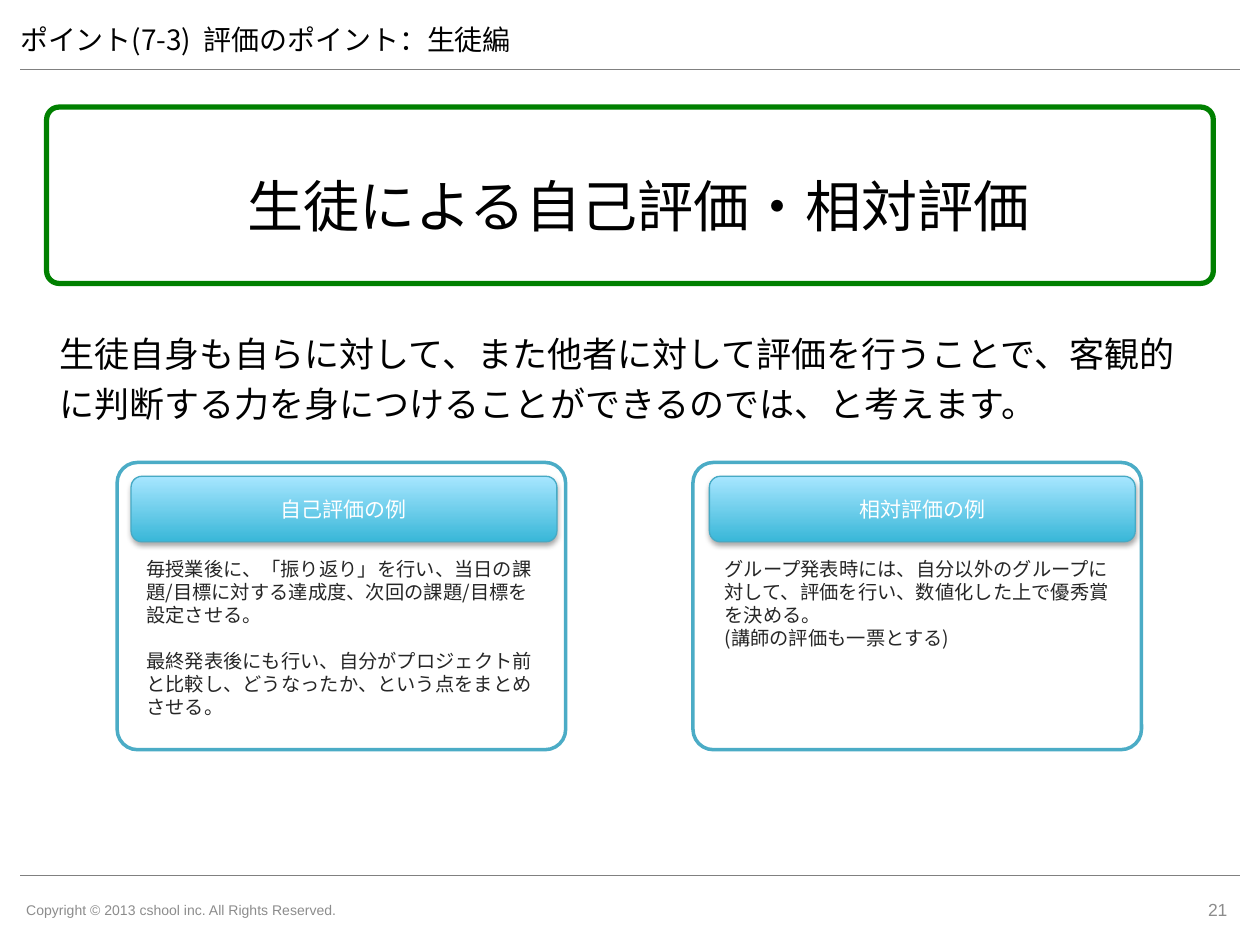
from lxml import etree
from pptx import Presentation
from pptx.dml.color import RGBColor
from pptx.enum import shapes, text
from pptx.oxml.ns import qn
from pptx.util import Inches, Pt

JP, LATIN = "Noto Sans CJK JP", "Arial"
BODY_INSETS = (0.12, 0.08, 0.12, 0.08)
PLAIN_INSETS = (0.1, 0.05, 0.1, 0.05)
LEFT, CENTER, RIGHT = text.PP_ALIGN.LEFT, text.PP_ALIGN.CENTER, text.PP_ALIGN.RIGHT
TOP, MIDDLE = text.MSO_ANCHOR.TOP, text.MSO_ANCHOR.MIDDLE


def rgb(value):
    return RGBColor.from_string(value)


def write(shape, paragraphs, size, color, font=JP, align=LEFT, anchor=MIDDLE,
          insets=PLAIN_INSETS, spacing=None, gap=0):
    """Fill a shape with paragraphs; gap is the space in points between them."""
    frame = shape.text_frame
    frame.word_wrap = True
    frame.auto_size = text.MSO_AUTO_SIZE.NONE
    frame.vertical_anchor = anchor
    (frame.margin_left, frame.margin_top,
     frame.margin_right, frame.margin_bottom) = map(Inches, insets)
    for index, line in enumerate(paragraphs):
        paragraph = frame.add_paragraph() if index else frame.paragraphs[0]
        paragraph.text = line
        paragraph.alignment = align
        if spacing:
            paragraph.line_spacing = spacing
        if index:
            paragraph.space_before = Pt(gap)
        paragraph.font.size = Pt(size)
        paragraph.font.name = font
        paragraph.font.color.rgb = rgb(color)
        defaults = paragraph._p.pPr.find(qn("a:defRPr"))
        etree.SubElement(defaults, qn("a:ea"), typeface=font)


def add_text(slide, box, paragraphs, size, color, **style):
    write(slide.shapes.add_textbox(*map(Inches, box)), paragraphs, size, color, **style)


def add_frame(slide, box, line, width, rounding=None, fill="FFFFFF"):
    frame = slide.shapes.add_shape(shapes.MSO_SHAPE.ROUNDED_RECTANGLE, *map(Inches, box))
    frame.shadow.inherit = False
    if rounding:
        frame.adjustments[0] = rounding
    frame.fill.solid()
    frame.fill.fore_color.rgb = rgb(fill)
    frame.line.color.rgb = rgb(line)
    frame.line.width = Pt(width)
    return frame


def add_rule(slide, y):
    rule = slide.shapes.add_connector(
        shapes.MSO_CONNECTOR.STRAIGHT, Inches(0.16), Inches(y), Inches(9.84), Inches(y))
    rule.line.color.rgb = rgb("808080")
    rule.line.width = Pt(0.75)
    etree.SubElement(rule._element.spPr, qn("a:effectLst"))


def add_header(slide, box, heading):
    title = slide.shapes.title
    title.left, title.top, title.width, title.height = map(Inches, box)
    write(title, [heading], 16, "000000")
    add_rule(slide, box[1] + box[3])


def add_footer(slide, top, copyright_line, number):
    add_rule(slide, top - 0.07)
    add_text(slide, (0.11, top, 3.17, 0.4), [copyright_line], 8, "8C8C8C", font=LATIN)
    add_text(slide, (9.09, top, 0.75, 0.4), [number], 10, "8C8C8C", font=LATIN, align=RIGHT)


def add_banner(slide, box, message):
    banner = add_frame(slide, box, "008000", 3, 0.071)
    write(banner, [message], 32, "000000", align=CENTER,
          insets=(0.24, 0.05, 0.1, 0.05), spacing=1.3)


def add_drop_shadow(shape):
    effects = shape._element.spPr.find(qn("a:effectLst"))
    shadow = etree.SubElement(effects, qn("a:outerShdw"), blurRad=str(Pt(3.1)),
                              dist=str(Pt(1.8)), dir="5400000", rotWithShape="0")
    black = etree.SubElement(shadow, qn("a:srgbClr"), val="000000")
    etree.SubElement(black, qn("a:alpha"), val="35000")


def add_example(slide, box, inset, heading, paragraphs):
    """Outlined card with a glossy heading bar and an explanation below it."""
    left, top, width, height = box
    add_frame(slide, box, "4BACC6", 2, 0.071)
    bar = add_frame(slide, (left + inset, top + 0.11, 3.38, 0.52), "46AAC5", 0.75)
    bar.fill.gradient()
    bar.fill.gradient_angle = 90
    for stop, color in zip(bar.fill.gradient_stops, ("39B7D8", "A7E6FF")):
        stop.color.rgb = rgb(color)
    add_drop_shadow(bar)
    write(bar, [heading], 12, "FFFFFF", align=CENTER)
    add_text(slide, (left + inset, top + 0.67, 3.39, height - 0.67), paragraphs,
             11, "262626", anchor=TOP, insets=BODY_INSETS, gap=13)


def main():
    deck = Presentation()
    deck.slide_width, deck.slide_height = Inches(10), Inches(7.5)
    slide = deck.slides.add_slide(deck.slide_layouts[5])

    add_header(slide, (0.06, 0.08, 8.92, 0.47), "ポイント(7-3)  評価のポイント：生徒編")
    add_banner(slide, (0.37, 0.85, 9.26, 1.4), "生徒による自己評価・相対評価")
    add_text(slide, (0.35, 2.49, 9.29, 0.96),
             ["生徒自身も自らに対して、また他者に対して評価を行うことで、"
              "客観的に判断する力を身につけることができるのでは、と考えます。"],
             20, "000000", anchor=TOP, insets=BODY_INSETS, spacing=1.2)
    add_example(slide, (0.93, 3.67, 3.56, 2.28), 0.11, "自己評価の例", [
        "毎授業後に、「振り返り」を行い、当日の課題/目標に対する達成度、"
        "次回の課題/目標を設定させる。",
        "最終発表後にも行い、自分がプロジェクト前と比較し、"
        "どうなったか、という点をまとめさせる。"])
    add_example(slide, (5.5, 3.67, 3.56, 2.28), 0.13, "相対評価の例", [
        "グループ発表時には、自分以外のグループに対して、評価を行い、"
        "数値化した上で優秀賞を決める。\n(講師の評価も一票とする)"])
    add_footer(slide, 7.02, "Copyright © 2013 cshool inc. All Rights Reserved.", "21")
    deck.save("out.pptx")


if __name__ == "__main__":
    main()
